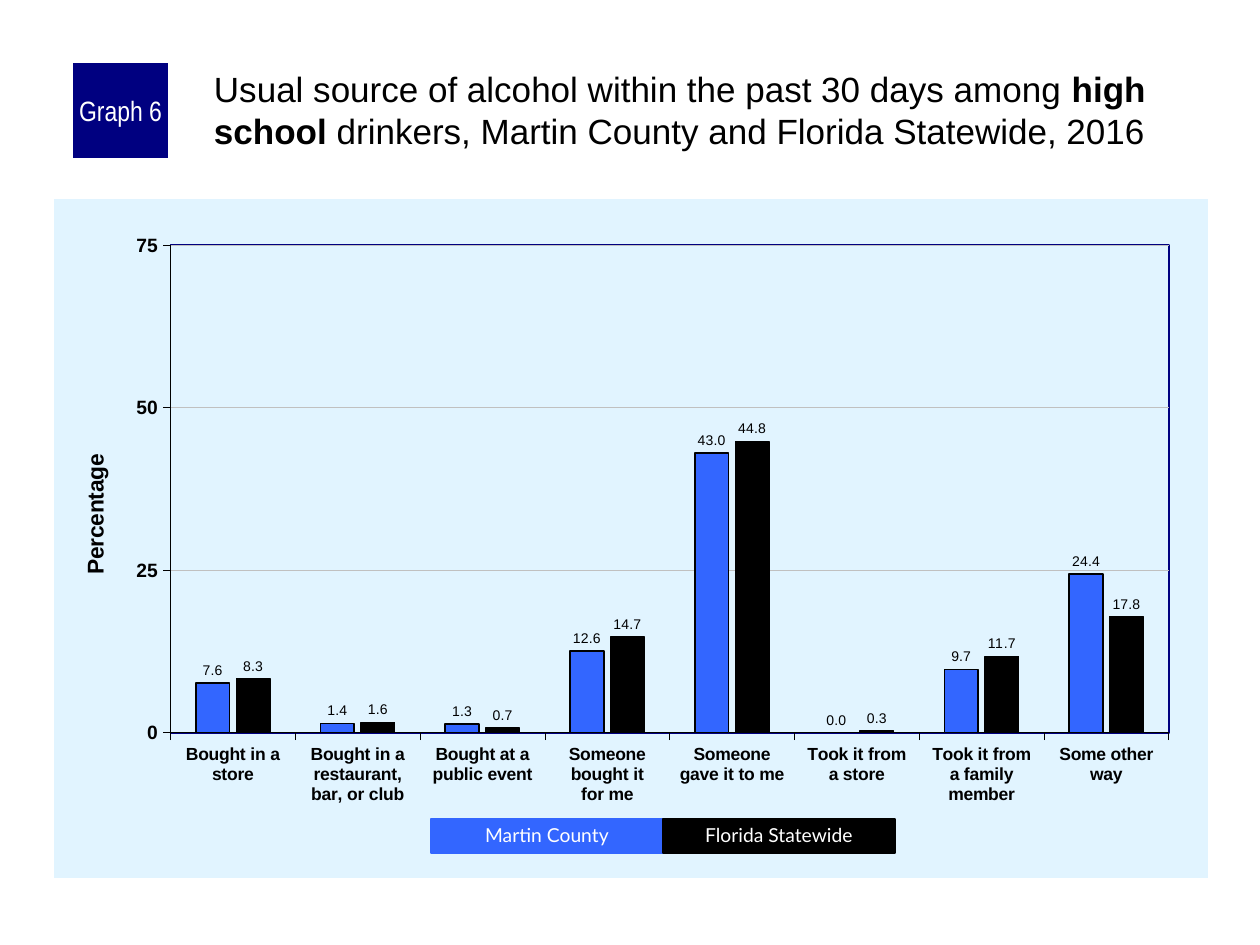
from lxml import etree
from pptx import Presentation, util as u
from pptx.chart.data import CategoryChartData
from pptx.dml.color import RGBColor
from pptx.enum import chart as charts, shapes, text
from pptx.oxml import parse_xml
from pptx.oxml.ns import nsdecls, qn

PX = 914400 / 126
BLACK, WHITE, NAVY, BLUE, PALE, GRAY = "000000", "FFFFFF", "000080", "3366FF", "E1F4FF", "C0C0C0"
CATEGORIES = [
    "Bought in a store", "Bought in a restaurant, bar, or club", "Bought at a public event",
    "Someone bought it\nfor me", "Someone\ngave it to me", "Took it from\na store",
    "Took it from\na family member", "Some other way",
]
SERIES = [
    ("Martin County", BLUE, 1, [7.6, 1.4, 1.3, 12.6, 43.0, 0.0, 9.7, 24.4]),
    ("Florida Statewide", BLACK, 0.75, [8.3, 1.6, 0.7, 14.7, 44.8, 0.3, 11.7, 17.8]),
]


def px(*lengths):
    """Turn pixel lengths into EMU."""
    return [u.Emu(round(length * PX)) for length in lengths]


def color(value):
    """Return the colour for a hex string."""
    return RGBColor.from_string(value)


def style_font(font, size, value=BLACK, name="Arial", bold=False):
    """Set size, colour, face and weight of a font."""
    font.size, font.name, font.bold = u.Pt(size), name, bold
    font.color.rgb = color(value)


def style_line(line, value, width):
    """Give a line its colour and width in points."""
    line.color.rgb, line.width = color(value), u.Pt(width)


def add_run(paragraph, words, *style, **options):
    """Append a styled run to a paragraph."""
    run = paragraph.add_run()
    run.text = words
    style_font(run.font, *style, **options)


def add_block(slide, box, words, fill, size, name, spacing=1.0, border=False, margins=(6, 0, 6, 0)):
    """Draw a filled rectangle with centred white text."""
    shape = slide.shapes.add_shape(shapes.MSO_SHAPE.RECTANGLE, *px(*box))
    shape.shadow.inherit = False
    shape.fill.solid()
    shape.fill.fore_color.rgb = color(fill)
    if border:
        style_line(shape.line, fill, 0.75)
    else:
        shape.line.fill.background()
    frame = shape.text_frame
    frame.word_wrap = True
    frame.vertical_anchor = text.MSO_ANCHOR.MIDDLE
    frame.margin_left, frame.margin_top, frame.margin_right, frame.margin_bottom = px(*margins)
    paragraph = frame.paragraphs[0]
    paragraph.alignment = text.PP_ALIGN.CENTER
    paragraph.line_spacing = spacing
    add_run(paragraph, words, size, WHITE, name)


def add_heading(slide, box):
    """Place the graph number and the title beside it."""
    left, top, width, height = box
    add_block(slide, (left, top, 95, 95), "Graph 6", NAVY, 16, "Arial Narrow")
    frame = slide.shapes.add_textbox(*px(left + 137, top, width - 137, height)).text_frame
    frame.word_wrap = True
    frame.margin_left, frame.margin_top, frame.margin_right, frame.margin_bottom = px(4, 4, 0, 0)
    paragraph = frame.paragraphs[0]
    add_run(paragraph, "Usual source of alcohol within the past 30 days among ", 20)
    add_run(paragraph, "high school", 20, bold=True)
    add_run(paragraph, " drinkers, Martin County and Florida Statewide, 2016", 20)


def manual_layout(target="", **places):
    """Build a chart layout from fractions of the chart area."""
    inner = f'<c:layoutTarget val="{target}"/>' if target else ""
    modes = "".join(f'<c:{key}Mode val="edge"/>' for key in "xy")
    values = "".join(f'<c:{key} val="{value}"/>' for key, value in places.items())
    return parse_xml(f'<c:layout {nsdecls("c")}><c:manualLayout>{inner}{modes}{values}</c:manualLayout></c:layout>')


def solid_properties(fill, line=None):
    """Build chart area properties with a fill and an optional outline."""
    paint = '<a:solidFill><a:srgbClr val="{}"/></a:solidFill>'
    outline = f'<a:ln w="12700">{paint.format(line)}</a:ln>' if line else "<a:ln><a:noFill/></a:ln>"
    return parse_xml(f'<c:spPr {nsdecls("c", "a")}>{paint.format(fill)}{outline}</c:spPr>')


def style_areas(chart):
    """Fill the chart area and fix and frame the plot area."""
    space = chart._chartSpace
    space.find(qn("c:chart")).addnext(solid_properties(PALE))
    plot_area = space.find(".//" + qn("c:plotArea"))
    for layout in plot_area.findall(qn("c:layout")):
        plot_area.remove(layout)
    plot_area.insert(0, manual_layout("inner", x=0.1, y=0.07, w=0.87, h=0.72))
    for key, value in zip("xywh", (0.101, 0.068, 0.865, 0.718)):
        plot_area[0].find(".//" + qn(f"c:{key}")).set("val", str(value))
    plot_area.append(solid_properties(PALE, NAVY))


def style_axes(chart):
    """Set scale, ticks, gridlines and labels of both axes."""
    for axis, size in ((chart.category_axis, 10), (chart.value_axis, 11)):
        axis.major_tick_mark = charts.XL_TICK_MARK.OUTSIDE
        axis.minor_tick_mark = charts.XL_TICK_MARK.NONE
        style_font(axis.tick_labels.font, size, bold=True)
        style_line(axis.format.line, BLACK, 0.25)
    axis = chart.value_axis
    axis.minimum_scale, axis.maximum_scale, axis.major_unit = 0, 75, 25
    axis.tick_labels.number_format = "0"
    axis.tick_labels.number_format_is_linked = False
    style_line(axis.major_gridlines.format.line, GRAY, 0.25)
    title = axis.axis_title
    add_run(title.text_frame.paragraphs[0], "Percentage", 13, bold=True)
    element = title._element
    for layout in element.findall(qn("c:layout")):
        element.remove(layout)
    element.find(qn("c:tx")).addnext(manual_layout(x=0.02, y=0.37))


def style_series(plot):
    """Colour the columns and label their values."""
    plot.gap_width, plot.overlap, plot.vary_by_categories = 150, -20, False
    for series, (_, fill, width, _) in zip(plot.series, SERIES):
        series.invert_if_negative = False
        series.format.fill.solid()
        series.format.fill.fore_color.rgb = color(fill)
        style_line(series.format.line, BLACK, width)
        labels = series.data_labels
        labels.show_value = True
        labels.number_format, labels.number_format_is_linked = "0.0", False
        labels.position = charts.XL_LABEL_POSITION.OUTSIDE_END
        style_font(labels.font, 8)


def add_column_chart(slide, box):
    """Draw the clustered columns with their legend blocks."""
    data = CategoryChartData(number_format="0.0")
    data.categories = CATEGORIES
    for name, _, _, values in SERIES:
        data.add_series(name, values)
    kind = charts.XL_CHART_TYPE.COLUMN_CLUSTERED
    chart = slide.shapes.add_chart(kind, *px(*box), data).chart
    chart.has_title = chart.has_legend = False
    style_font(chart.font, 11.5)
    style_areas(chart)
    style_axes(chart)
    style_series(chart.plots[0])
    left, top, _, _ = box
    for index, (name, fill, _, _) in enumerate(SERIES):
        block = (left + 377 + index * 232, top + 620, 232, 34)
        add_block(slide, block, name, fill, 11, "Lato", 0.9, True, (13, 6, 13, 6))


def main():
    """Build and save the slide."""
    presentation = Presentation()
    presentation.slide_width, presentation.slide_height = px(1260, 945)
    slide = presentation.slides.add_slide(presentation.slide_layouts[6])
    add_column_chart(slide, (54, 199, 1154, 679))
    add_heading(slide, (73, 63, 1135, 105))
    presentation.save("out.pptx")


if __name__ == "__main__":
    main()
